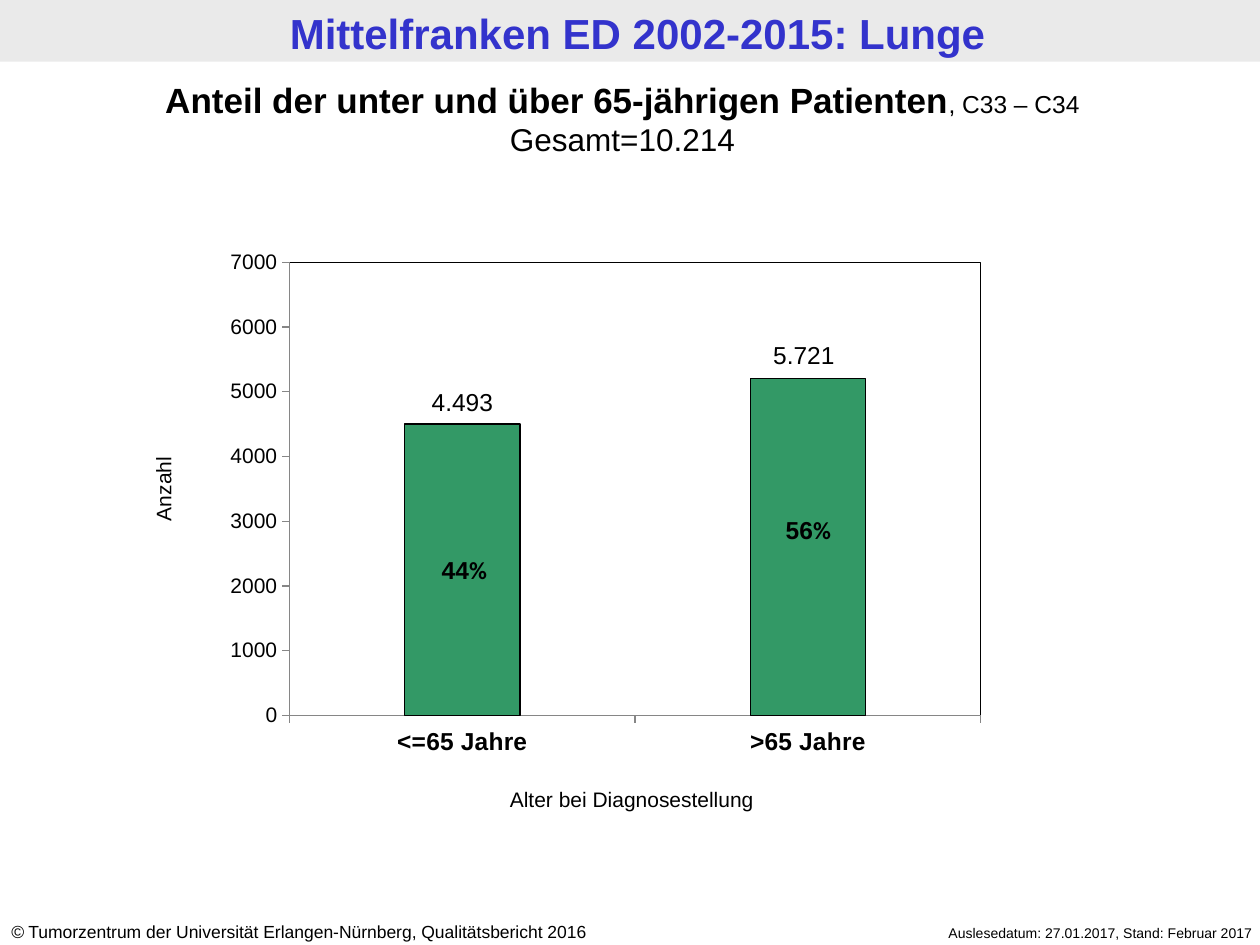
from lxml import etree
from pptx import Presentation
from pptx.chart.data import CategoryChartData
from pptx.dml.color import RGBColor
from pptx.enum import chart as ch, shapes, text
from pptx.oxml import parse_xml
from pptx.oxml.ns import nsdecls, qn
from pptx.util import Inches, Pt

BLACK = RGBColor(0x00, 0x00, 0x00)
BLUE = RGBColor(0x33, 0x33, 0xCC)
GREEN = RGBColor(0x33, 0x99, 0x66)
GREY = RGBColor(0x86, 0x86, 0x86)
BAND = RGBColor(0xEA, 0xEA, 0xEA)

LEFT, CENTER, RIGHT = (text.PP_ALIGN.LEFT, text.PP_ALIGN.CENTER,
                       text.PP_ALIGN.RIGHT)
PLOT_LAYOUT = {"x": 0.113, "y": 0.142, "w": 0.786, "h": 0.772}


def set_font(font, color=BLACK, **formats):
    font.color.rgb = color
    for name, value in {"name": "Arial", **formats}.items():
        setattr(font, name, value)


def add_text(slide, box, paragraphs, align=CENTER, rotation=0):
    """Each paragraph is a list of (text, font formats) runs."""
    sp = slide.shapes.add_textbox(*map(Inches, box))
    sp.rotation = rotation
    tf = sp.text_frame
    tf.word_wrap = True
    for i, runs in enumerate(paragraphs):
        p = tf.add_paragraph() if i else tf.paragraphs[0]
        p.alignment = align
        for words, formats in runs:
            r = p.add_run()
            r.text = words
            set_font(r.font, **formats)


def add_header_band(slide):
    sp = slide.shapes.add_shape(shapes.MSO_SHAPE.RECTANGLE, 0, 0,
                                Inches(10), Inches(0.49))
    sp.shadow.inherit = False
    sp.fill.solid()
    sp.fill.fore_color.rgb = BAND
    sp.line.fill.background()


def format_plot_area(chart):
    """Fix the inner plot size and draw a black frame around it."""
    area = chart._chartSpace.chart.plotArea
    for old in area.findall(qn("c:layout")):
        area.remove(old)
    layout = parse_xml(f'<c:layout {nsdecls("c")}><c:manualLayout>'
                       '<c:layoutTarget val="inner"/><c:xMode val="edge"/>'
                       '<c:yMode val="edge"/></c:manualLayout></c:layout>')
    for side, share in PLOT_LAYOUT.items():
        etree.SubElement(layout[0], qn(f"c:{side}")).set("val", str(share))
    area.insert(0, layout)
    area.append(parse_xml(
        f'<c:spPr {nsdecls("c", "a")}><a:noFill/><a:ln w="9525"><a:solidFill>'
        f'<a:srgbClr val="{BLACK}"/></a:solidFill></a:ln></c:spPr>'))


def format_axis(axis, **font):
    axis.has_major_gridlines = False
    axis.major_tick_mark = ch.XL_TICK_MARK.OUTSIDE
    axis.minor_tick_mark = ch.XL_TICK_MARK.NONE
    axis.format.line.color.rgb = GREY
    axis.format.line.width = Pt(0.75)
    set_font(axis.tick_labels.font, **font)


def add_age_chart(slide):
    data = CategoryChartData()
    data.categories = ["<=65 Jahre", ">65 Jahre"]
    data.add_series("Series 1", (4500, 5200))
    chart = slide.shapes.add_chart(
        ch.XL_CHART_TYPE.COLUMN_STACKED,
        *map(Inches, (1.51, 1.42, 6.98, 4.66)), data).chart
    chart.has_legend = chart.has_title = False
    set_font(chart.font, name="Calibri", size=Pt(18))

    format_axis(chart.category_axis, size=Pt(14), bold=True)
    axis = chart.value_axis
    format_axis(axis, size=Pt(12), bold=False)
    scale = {"minimum_scale": 0, "maximum_scale": 7000, "major_unit": 1000}
    for name, value in scale.items():
        setattr(axis, name, value)

    plot = chart.plots[0]
    plot.gap_width, plot.overlap = 200, 100
    plot.vary_by_categories = False
    bars = plot.series[0].format
    bars.fill.solid()
    bars.fill.fore_color.rgb = GREEN
    bars.line.color.rgb = BLACK
    bars.line.width = Pt(0.75)
    format_plot_area(chart)


def add_share(slide, box, number):
    bold = {"size": Pt(14), "bold": True}
    add_text(slide, box, [[(number, bold), ("%", {**bold, "name": "Calibri"})]])


def main():
    prs = Presentation()
    prs.slide_width, prs.slide_height = Inches(10), Inches(7.5)
    slide = prs.slides.add_slide(prs.slide_layouts[6])

    add_header_band(slide)
    add_text(slide, (0.06, 0.01, 10, 0.49),
             [[("Mittelfranken ED 2002-2015: Lunge",
                {"size": Pt(24), "bold": True, "color": BLUE})]])
    small = {"size": Pt(10)}
    add_text(slide, (-0.01, 7.26, 5.24, 0.27),
             [[("©", {**small, "italic": True}),
               (" Tumorzentrum der Universität Erlangen-Nürnberg, "
                "Qualitätsbericht 2016", small)]], LEFT)
    add_text(slide, (6.65, 7.29, 3.39, 0.24),
             [[("Auslesedatum: 27.01.2017, Stand: Februar 2017",
                {"size": Pt(8)})]], RIGHT)

    add_age_chart(slide)
    add_text(slide, (0, 0.57, 9.88, 0.74),
             [[("Anteil der unter und über 65-jährigen Patienten",
                {"size": Pt(20), "bold": True}),
               (", C33 – C34", {"size": Pt(14)})],
              [("Gesamt=10.214", {"size": Pt(18)})]])
    add_share(slide, (3.19, 4.36, 0.99, 0.34), "44")
    add_share(slide, (5.94, 4.04, 0.95, 0.34), "56")
    for box, words, size, rotation in (
            ((3.35, 6.19, 3.33, 0.3), "Alter bei Diagnosestellung", 12, 0),
            ((-0.01, 3.73, 2.61, 0.3), "Anzahl", 12, 270),
            ((3.16, 3.02, 1.02, 0.34), "4.493", 14, 0),
            ((5.87, 2.65, 1.02, 0.34), "5.721", 14, 0)):
        add_text(slide, box, [[(words, {"size": Pt(size)})]], rotation=rotation)

    prs.save("out.pptx")


if __name__ == "__main__":
    main()
